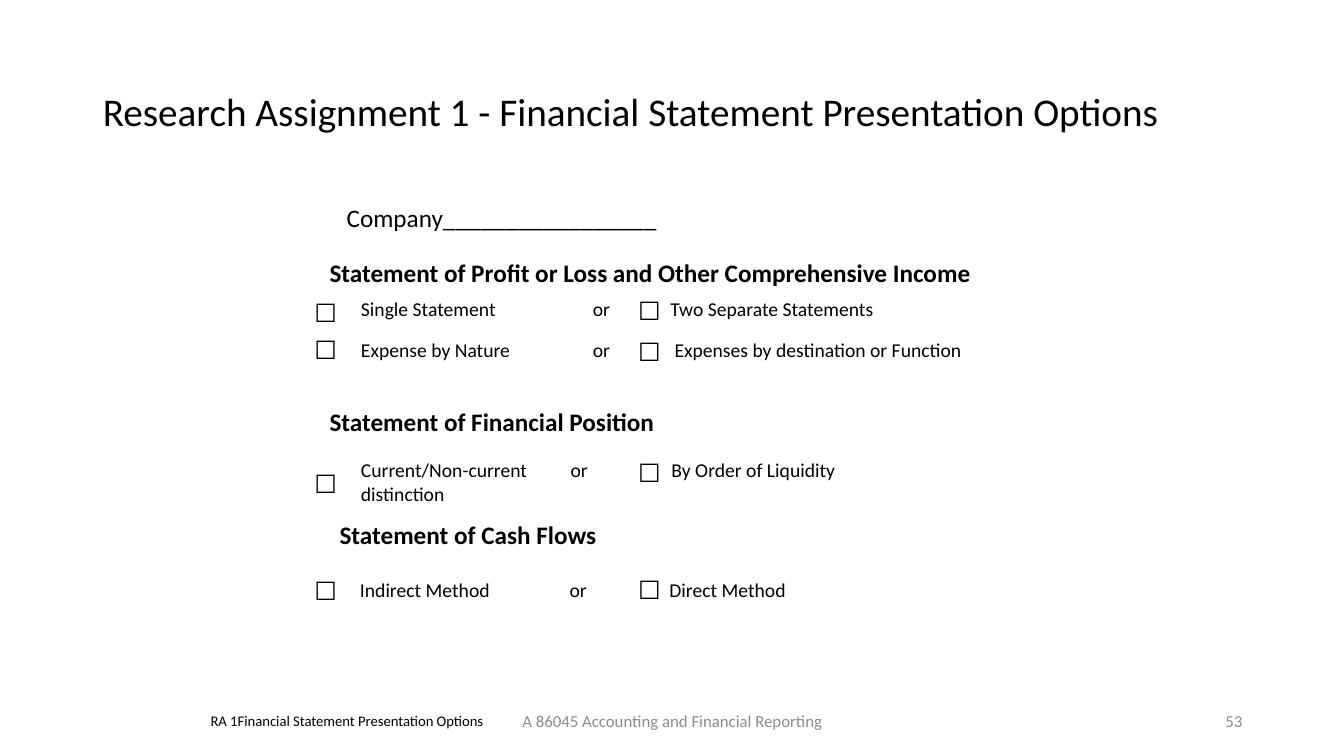
from lxml import etree
from pptx import Presentation
from pptx.dml.color import RGBColor
from pptx.enum import text as t
from pptx.oxml import ns
from pptx.util import Inches, Pt

BODY_FONT, BOX_FONT = "Calibri", "Noto Sans CJK JP"
BLACK, GREY = "000000", "8C8C8C"
LEFT, CENTER, RIGHT = t.PP_ALIGN.LEFT, t.PP_ALIGN.CENTER, t.PP_ALIGN.RIGHT

TITLE = "Research Assignment 1 - Financial Statement Presentation Options"
COMPANY = "Company_________________"
SOURCE_LABEL = "RA 1Financial Statement Presentation Options"
FOOTER = "A 86045 Accounting and Financial Reporting"
SLIDE_NUMBER = "53"

WIDE_COLUMNS = (2.3, 0.46, 3.67, 0.25)
NARROW_COLUMNS = (2.08, 0.42, 3.18, 0.38)
ROW_HEIGHT = 0.41

# Heading with its left and top; table left, top and column widths;
# rows of first choice, second choice and indent of the second choice
SECTIONS = [
    ("Statement of Profit or Loss and Other Comprehensive Income", 3.17, 2.5,
     3.48, 2.9, WIDE_COLUMNS,
     [("Single Statement", "Two Separate Statements", 0.41),
      ("Expense by Nature", "Expenses by destination or Function", 0.45)]),
    ("Statement of Financial Position", 3.17, 3.98,
     3.48, 4.5, NARROW_COLUMNS,
     [("Current/Non-current distinction", "By Order of Liquidity", 0.68), None]),
    ("Statement of Cash Flows", 3.27, 5.1,
     3.47, 5.69, NARROW_COLUMNS,
     [("Indirect Method", "Direct Method", 0.67), None]),
]
CHECKBOX_TOPS = {3.02: (2.9, 3.27, 4.6, 5.66), 6.23: (2.88, 3.29, 4.49, 5.65)}


def color(hex_code):
    return RGBColor.from_string(hex_code)


def write(paragraph, words, size, ink=BLACK, bold=False, font=BODY_FONT, align=LEFT):
    paragraph.alignment = align
    run = paragraph.add_run()
    run.text = words
    run.font.size = Pt(size)
    run.font.name = font
    run.font.bold = bold
    run.font.color.rgb = color(ink)
    return run


def add_label(words, left, top, width, height, size, wrap=True, grow=True, **style):
    """Add a text box: growing from the top, or fixed and centred vertically."""
    box = slide.shapes.add_textbox(*map(Inches, (left, top, width, height)))
    frame = box.text_frame
    frame.word_wrap = wrap
    if grow:
        frame.auto_size = t.MSO_AUTO_SIZE.SHAPE_TO_FIT_TEXT
    else:
        frame.vertical_anchor = t.MSO_ANCHOR.MIDDLE
    return write(frame.paragraphs[0], words, size, **style)


def add_choices(left, top, columns, rows):
    """Add a plain table with one pair of choices a row."""
    table = slide.shapes.add_table(
        len(rows), len(columns), Inches(left), Inches(top),
        Inches(sum(columns)), Inches(ROW_HEIGHT * len(rows))).table
    table.first_row = table.horz_banding = False
    for column, width in zip(table.columns, columns):
        column.width = Inches(width)
    for cell in table.iter_cells():
        cell.fill.background()
    for row, choices in enumerate(rows):
        if choices is None:
            continue
        first, second, indent = choices
        for column, words in enumerate((first, "or", second)):
            write(table.cell(row, column).text_frame.paragraphs[0], words, 14)
        table.cell(row, 2).margin_left = Inches(indent)


prs = Presentation()
prs.slide_width, prs.slide_height = Inches(13.33), Inches(7.5)
slide = prs.slides.add_slide(prs.slide_layouts[5])

title = slide.shapes.title
title.left, title.top = Inches(0.92), Inches(0.4)
title.width, title.height = Inches(11.5), Inches(1.45)
title.text_frame.vertical_anchor = t.MSO_ANCHOR.MIDDLE
title.text_frame.paragraphs[0].line_spacing = 0.9
write(title.text_frame.paragraphs[0], TITLE, 28)

add_label(FOOTER, 4.42, 6.95, 4.5, 0.4, 12, grow=False, ink=GREY, align=CENTER)
add_label(COMPANY, 3.34, 1.96, 3.87, 0.4, 18)

for heading, left, top, table_left, table_top, columns, rows in SECTIONS:
    add_choices(table_left, table_top, columns, rows)
    add_label(heading, left, top, 6.67, 0.4, 18, bold=True)

for left, tops in CHECKBOX_TOPS.items():
    for top in tops:
        mark = add_label("☐", left, top, 0.45, 0.4, 18, wrap=False, font=BOX_FONT)
        etree.SubElement(mark.font._element, ns.qn("a:ea"), typeface=BOX_FONT)

add_label(SOURCE_LABEL, 1.99, 7.01, 3, 0.28, 10.5, wrap=False)
add_label(SLIDE_NUMBER, 9.42, 6.95, 3, 0.4, 12, grow=False, ink=GREY, align=RIGHT)

prs.save("out.pptx")
